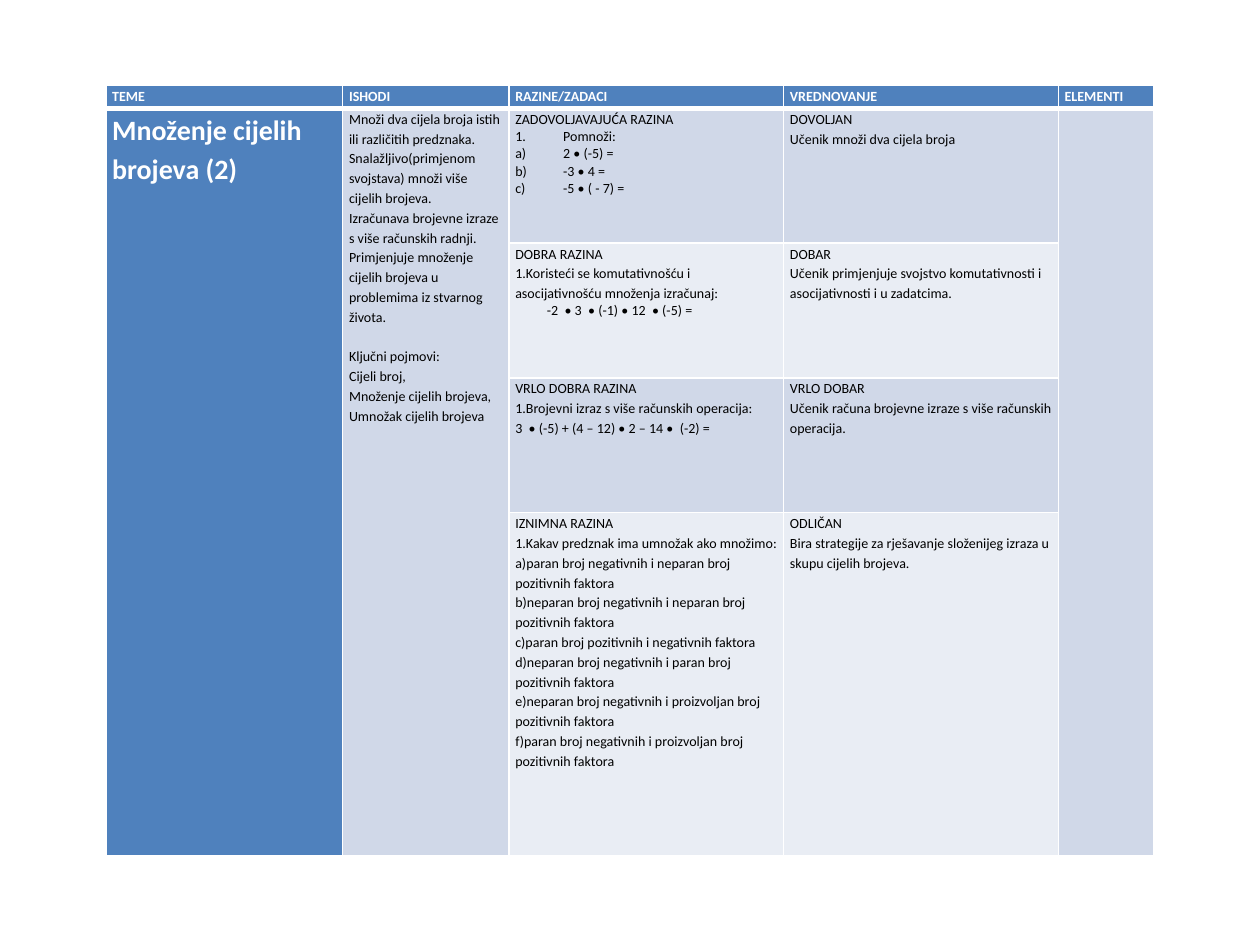
from dataclasses import dataclass

from lxml import etree
from pptx import Presentation
from pptx.dml.color import RGBColor
from pptx.oxml.ns import qn
from pptx.util import Inches, Pt

BLANK_LAYOUT = 6
SIDES = ("L", "R", "T", "B")


@dataclass(frozen=True)
class Theme:
    font: str = "Calibri"
    accent: str = "4F81BD"
    band_dark: str = "D0D8E8"
    band_light: str = "E9EDF4"
    white: str = "FFFFFF"
    black: str = "000000"
    body_size: int = 8
    topic_size: int = 16
    line_spacing: float = 1.15
    paragraph_gap: float = 11.3
    rule: int = 1
    header_rule: int = 3


@dataclass(frozen=True)
class Line:
    """A paragraph that departs from the plain one."""
    text: str
    margin: float = 0
    hanging: float = 0
    numbering: str = ""
    gap: bool = False


def numbered(text, scheme):
    return Line(text, 0.38, 0.38, scheme)


HEADINGS = ("TEME", "ISHODI", "RAZINE/ZADACI", "VREDNOVANJE", "ELEMENTI")
TOPIC = ["Množenje cijelih brojeva (2)"]
OUTCOMES = [
    "Množi dva cijela broja istih ili različitih predznaka.",
    "Snalažljivo(primjenom svojstava) množi više cijelih brojeva.",
    "Izračunava brojevne izraze s više računskih radnji.",
    "Primjenjuje množenje cijelih brojeva u problemima iz stvarnog života.",
    Line("Ključni pojmovi:", gap=True),
    "Cijeli broj,",
    "Množenje cijelih brojeva,",
    "Umnožak cijelih brojeva",
]
# Each level: tasks, then grading
LEVELS = [
    (["ZADOVOLJAVAJUĆA RAZINA",
      numbered("Pomnoži:", "arabicPeriod"),
      numbered("2 • (-5) =", "alphaLcParenR"),
      numbered("-3 • 4 =", "alphaLcParenR"),
      numbered("-5 • ( - 7) =", "alphaLcParenR")],
     ["DOVOLJAN", "Učenik množi dva cijela broja"]),
    (["DOBRA RAZINA",
      "1.Koristeći se komutativnošću i asocijativnošću množenja izračunaj:",
      Line("-2  • 3  • (-1) • 12  • (-5) =", 0.5, 0.25)],
     ["DOBAR",
      "Učenik primjenjuje svojstvo komutativnosti i asocijativnosti i u zadatcima."]),
    (["VRLO DOBRA RAZINA",
      "1.Brojevni izraz s više računskih operacija:",
      "3  • (-5) + (4 – 12) • 2 – 14 •  (-2) ="],
     ["VRLO DOBAR", "Učenik računa brojevne izraze s više računskih operacija."]),
    (["IZNIMNA RAZINA",
      "1.Kakav predznak ima umnožak ako množimo:",
      "a)paran broj negativnih i neparan broj pozitivnih faktora",
      "b)neparan broj negativnih i neparan broj pozitivnih faktora",
      "c)paran broj pozitivnih i negativnih faktora",
      "d)neparan broj negativnih i paran broj pozitivnih faktora",
      "e)neparan broj negativnih i proizvoljan broj pozitivnih faktora",
      "f)paran broj negativnih i proizvoljan broj pozitivnih faktora"],
     ["ODLIČAN",
      "Bira strategije za rješavanje složenijeg izraza u skupu cijelih brojeva."]),
]
COLUMN_WIDTHS = (1.88, 1.32, 2.18, 2.18, 0.76)
ROW_HEIGHTS = (0.18, 1.07, 1.07, 1.07, 2.72)


class PageBuilder:
    def __init__(self, page, theme):
        self.page = page
        self.theme = theme

    def table(self, left, top, widths, heights):
        frame = self.page.shapes.add_table(
            len(heights), len(widths), Inches(left), Inches(top),
            Inches(sum(widths)), Inches(sum(heights)))
        table = frame.table
        table.horz_banding = False
        for column, width in zip(table.columns, widths):
            column.width = Inches(width)
        for row, height in zip(table.rows, heights):
            row.height = Inches(height)
        return table

    def cell(self, cell, fill, header=False):
        cell.margin_left = cell.margin_right = Inches(0.05)
        cell.margin_top = cell.margin_bottom = 0
        self.borders(cell, header)
        cell.fill.solid()
        cell.fill.fore_color.rgb = RGBColor.from_string(fill)
        cell.text_frame.paragraphs[0].font.size = Pt(self.theme.body_size)

    def borders(self, cell, header):
        properties = cell._tc.get_or_add_tcPr()
        for side in SIDES:
            thick = header and side == "B"
            width = self.theme.header_rule if thick else self.theme.rule
            line = etree.SubElement(properties, qn(f"a:ln{side}"), w=str(Pt(width)))
            solid = etree.SubElement(line, qn("a:solidFill"))
            etree.SubElement(solid, qn("a:srgbClr"), val=self.theme.white)

    def text(self, cell, lines, size=None, color=None, bold=False):
        theme = self.theme
        for index, line in enumerate(lines):
            if isinstance(line, str):
                line = Line(line)
            paragraphs = cell.text_frame.paragraphs
            para = cell.text_frame.add_paragraph() if index else paragraphs[0]
            para.line_spacing = 1.0 if line.margin else theme.line_spacing
            if line.gap:
                para.space_before = Pt(theme.paragraph_gap)
            if line.margin:
                self.indent(para, line)
            span = para.add_run()
            span.text = line.text
            span.font.name = theme.font
            span.font.size = Pt(size or theme.body_size)
            span.font.bold = bold
            span.font.color.rgb = RGBColor.from_string(color or theme.black)

    def indent(self, para, line):
        properties = para._p.get_or_add_pPr()
        properties.set("marL", str(Inches(line.margin)))
        properties.set("indent", str(-Inches(line.hanging)))
        if line.numbering:
            etree.SubElement(properties, qn("a:buAutoNum"), type=line.numbering)


def main():
    deck = Presentation()
    deck.slide_width, deck.slide_height = Inches(10), Inches(7.5)
    page = deck.slides.add_slide(deck.slide_layouts[BLANK_LAYOUT])
    theme = Theme()
    builder = PageBuilder(page, theme)
    table = builder.table(0.84, 0.68, COLUMN_WIDTHS, ROW_HEIGHTS)

    # Header row
    for column, heading in enumerate(HEADINGS):
        cell = table.cell(0, column)
        builder.cell(cell, theme.accent, header=True)
        builder.text(cell, [heading], color=theme.white, bold=True)

    # Level rows: outer columns keep one fill, inner columns alternate
    for row, (tasks, grading) in enumerate(LEVELS, start=1):
        band = theme.band_dark if row % 2 else theme.band_light
        fills = (theme.accent, theme.band_dark, band, band, theme.band_dark)
        for column, fill in enumerate(fills):
            builder.cell(table.cell(row, column), fill)
        builder.text(table.cell(row, 2), tasks)
        builder.text(table.cell(row, 3), grading)

    # Columns that span all levels
    for column in (0, 1, 4):
        table.cell(1, column).merge(table.cell(len(LEVELS), column))
    builder.text(table.cell(1, 0), TOPIC, theme.topic_size, theme.white, bold=True)
    builder.text(table.cell(1, 1), OUTCOMES)

    deck.save("out.pptx")


if __name__ == "__main__":
    main()
